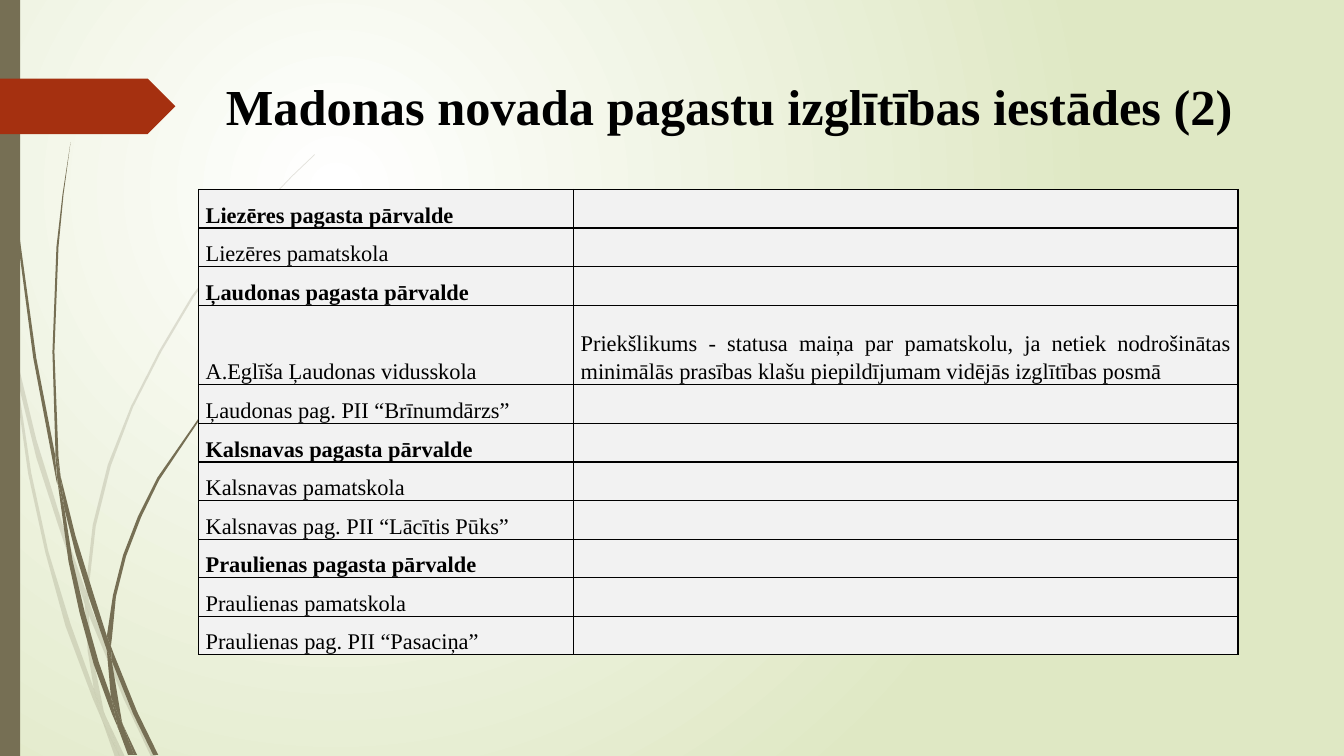
from lxml import etree
from pptx import Presentation
from pptx.dml.color import RGBColor
from pptx.enum.shapes import MSO_SHAPE
from pptx.enum.text import MSO_ANCHOR, PP_ALIGN
from pptx.oxml import parse_xml
from pptx.oxml.ns import nsdecls, qn
from pptx.util import Inches, Pt

RECTANGLE, PENTAGON = MSO_SHAPE.RECTANGLE, MSO_SHAPE.PENTAGON
TOP, BOTTOM = MSO_ANCHOR.TOP, MSO_ANCHOR.BOTTOM
LEFT, JUSTIFY = PP_ALIGN.LEFT, PP_ALIGN.JUSTIFY
FONT = "Times New Roman"
OLIVE, RUST, BLACK, PALE = "766F54", "A53010", "000000", "F2F2F2"

# Outlines of the grass pieces, in inches
LIGHT_GRASS = [
    [(0.11, 3.5), (0.09, 3.22), (0, 2.82), (0, 2.99), (0.1, 3.44)],
    [(0.58, 5.22), (0.84, 5.99), (0.85, 5.86), (0.62, 5.2), (0.36, 4.36),
     (0.14, 3.45), (0.17, 3.76), (0.36, 4.54)],
    [(0.92, 6.07), (0.88, 5.96), (0.88, 6.1), (1.23, 6.94), (1.5, 7.51),
     (1.55, 7.51), (1.27, 6.92)],
    [(1.19, 7.51), (1.24, 7.51), (1.05, 7.11)],
    [(0.93, 6.83), (0.7, 6.19), (0.48, 5.47), (0.31, 4.69), (0.17, 3.76),
     (0.11, 3.5), (0.28, 4.7), (0.45, 5.48), (0.65, 6.21), (0.92, 6.93),
     (1.01, 7.14), (0.99, 7.07)],
    [(0.84, 5.99), (0.87, 6.46), (0.93, 6.83), (0.96, 6.92), (1.05, 7.11),
     (1.03, 7.06), (0.91, 6.46), (0.88, 6.1), (0.88, 6.08)],
    [(0.88, 5.84), (0.95, 5.22), (1.1, 4.62), (1.32, 4.04), (1.6, 3.49),
     (1.92, 2.95), (2.29, 2.45), (2.68, 1.98), (2.9, 1.75), (3.12, 1.54),
     (3.12, 1.53), (2.89, 1.75), (2.68, 1.97), (2.28, 2.44), (1.9, 2.94),
     (1.58, 3.48), (1.3, 4.03), (1.07, 4.61), (0.92, 5.21), (0.85, 5.84),
     (0.85, 5.86), (0.88, 5.96)],
    [(1.01, 7.14), (1.14, 7.51), (1.19, 7.51)],
    [(0.88, 6.08), (0.88, 6.1), (0.88, 5.96), (0.85, 5.86), (0.84, 5.99)],
    [(0.96, 6.92), (0.93, 6.83), (0.99, 7.07), (1.01, 7.14), (1.19, 7.51),
     (1.05, 7.11)],
]
DARK_GRASS = [
    [(0.07, 1.1), (0.17, 2.33), (0.33, 3.55), (0.56, 4.77), (0.57, 4.81),
     (0.55, 4.57), (0.55, 4.53), (0.36, 3.55), (0.19, 2.32), (0.08, 1.09),
     (0.05, 0.48), (0.04, 0), (0.03, 0), (0.04, 0.48)],
    [(0.88, 5.92), (1.06, 6.45), (1.06, 6.31), (0.93, 5.9), (0.75, 5.32),
     (0.6, 4.72), (0.64, 5.05), (0.75, 5.49)],
    [(1.13, 6.49), (1.1, 6.41), (1.11, 6.56), (1.32, 7.08), (1.52, 7.49),
     (1.57, 7.49), (1.36, 7.06)],
    [(1.1, 6.91), (0.98, 6.57), (0.84, 6.07), (0.72, 5.56), (0.64, 5.05),
     (0.57, 4.77), (0.68, 5.57), (0.79, 6.08), (0.93, 6.59), (1.11, 7.08),
     (1.17, 7.22), (1.16, 7.17)],
    [(0.6, 4.72), (0.58, 4.53), (0.54, 3.49), (0.58, 2.45), (0.63, 1.93),
     (0.7, 1.41), (0.62, 1.93), (0.56, 2.45), (0.52, 3.49), (0.55, 4.49)],
    [(1.33, 7.49), (1.36, 7.49), (1.22, 7.19)],
    [(0.57, 4.77), (0.64, 5.05), (0.6, 4.72), (0.55, 4.49), (0.55, 4.53)],
    [(1.11, 6.33), (1.15, 5.92), (1.25, 5.52), (1.4, 5.13), (1.58, 4.76),
     (2.05, 4.06), (2.31, 3.74), (2.45, 3.59), (2.61, 3.44), (2.6, 3.44),
     (2.45, 3.58), (2.31, 3.73), (2.04, 4.05), (1.56, 4.74), (1.37, 5.12),
     (1.22, 5.51), (1.12, 5.91), (1.06, 6.31), (1.1, 6.41)],
    [(1.17, 7.22), (1.27, 7.49), (1.31, 7.49)],
    [(1.06, 6.45), (1.1, 6.91), (1.16, 7.06), (1.22, 7.19), (1.21, 7.16),
     (1.11, 6.56), (1.09, 6.51)],
    [(1.06, 6.45), (1.09, 6.51), (1.11, 6.56), (1.1, 6.41), (1.06, 6.31)],
    [(1.16, 7.06), (1.1, 6.91), (1.16, 7.17), (1.17, 7.22), (1.3, 7.49),
     (1.33, 7.49), (1.22, 7.19)],
]

# First column, second column, bold
ROWS = [
    ("Liezēres pagasta pārvalde", "", True),
    ("Liezēres pamatskola", "", False),
    ("Ļaudonas pagasta pārvalde", "", True),
    ("A.Eglīša Ļaudonas vidusskola",
     "Priekšlikums - statusa maiņa par pamatskolu, ja netiek nodrošinātas "
     "minimālās prasības klašu piepildījumam vidējās izglītības posmā", False),
    ("Ļaudonas pag. PII “Brīnumdārzs”", "", False),
    ("Kalsnavas pagasta pārvalde", "", True),
    ("Kalsnavas pamatskola", "", False),
    ("Kalsnavas pag. PII “Lācītis Pūks”", "", False),
    ("Praulienas pagasta pārvalde", "", True),
    ("Praulienas pamatskola", "", False),
    ("Praulienas pag. PII “Pasaciņa”", "", False),
]


def color(value):
    return RGBColor.from_string(value)


def paint(shape, value):
    shape.shadow.inherit = False
    shape.fill.solid()
    shape.fill.fore_color.rgb = color(value)
    shape.line.fill.background()


def set_font(para, size, bold):
    font = para.font
    font.name, font.size, font.bold = FONT, Pt(size), bold
    font.color.rgb = color(BLACK)


def add_background(page):
    fill = page.background.fill
    fill.gradient()
    for stop, value in zip(fill.gradient_stops, ("FFFFFF", "DFE8C4")):
        stop.color.rgb = color(value)
    gradient = page.element.xpath(".//a:gradFill")[0]
    gradient.remove(gradient.find(qn("a:lin")))
    gradient.append(parse_xml(
        f'<a:path {nsdecls("a")} path="circle">'
        '<a:fillToRect l="50000" t="50000" r="100000" b="100000"/></a:path>'))


def add_grass(page, left, top, pieces, opacity):
    group = page.shapes.add_group_shape()
    for piece in pieces:
        outline = [(Inches(left + x), Inches(top + y)) for x, y in piece]
        builder = group.shapes.build_freeform(*outline[0])
        builder.add_line_segments(outline[1:], close=True)
        blade = builder.convert_to_shape()
        paint(blade, OLIVE)
        if opacity < 100:
            tint = blade.element.spPr.find(qn("a:solidFill"))[0]
            etree.SubElement(tint, qn("a:alpha"), val=str(opacity * 1000))


def add_decoration(page, left, top, height):
    add_grass(page, left, top, LIGHT_GRASS, 20)
    add_grass(page, left, top, DARK_GRASS, 100)
    side_bar = page.shapes.add_shape(
        RECTANGLE, Inches(left), Inches(top), Inches(0.2), Inches(height))
    paint(side_bar, OLIVE)
    arrow = page.shapes.add_shape(
        PENTAGON, Inches(left), Inches(top + 0.78), Inches(1.74), Inches(0.55))
    paint(arrow, RUST)


def add_title(page, left, top, width, height):
    title = page.shapes.title
    title.left, title.top = Inches(left), Inches(top)
    title.width, title.height = Inches(width), Inches(height)
    frame = title.text_frame
    frame.text = "Madonas novada pagastu izglītības iestādes (2)"
    frame.vertical_anchor = TOP
    frame.word_wrap = True
    para = frame.paragraphs[0]
    para.alignment = LEFT
    set_font(para, 36, True)


def format_cell(cell, text, bold):
    cell.text = text
    cell.vertical_anchor = BOTTOM
    cell.margin_left = cell.margin_right = Inches(0.07)
    cell.margin_top = cell.margin_bottom = 0
    para = cell.text_frame.paragraphs[0]
    para.alignment = JUSTIFY
    para.line_spacing = 1.15
    para.space_before = Pt(5)
    set_font(para, 16, bold)
    properties = cell._tc.get_or_add_tcPr()
    for side in ("lnL", "lnR", "lnT", "lnB"):
        properties.append(parse_xml(
            f'<a:{side} {nsdecls("a")} w="{Pt(1)}"><a:solidFill>'
            f'<a:srgbClr val="{BLACK}"/></a:solidFill></a:{side}>'))
    cell.fill.solid()
    cell.fill.fore_color.rgb = color(PALE)


def add_school_table(page, left, top, width, height):
    table = page.shapes.add_table(
        len(ROWS), 2, Inches(left), Inches(top), Inches(width), Inches(height)).table
    table.first_row = table.horz_banding = False
    name_width, tall_row = 3.72, 0.79
    table.columns[0].width = Inches(name_width)
    table.columns[1].width = Inches(width - name_width)
    plain_row = (height - tall_row) / (len(ROWS) - 1)
    for index, (school, note, bold) in enumerate(ROWS):
        table.rows[index].height = Inches(tall_row if note else plain_row)
        format_cell(table.cell(index, 0), school, bold)
        format_cell(table.cell(index, 1), note, False)


def main():
    deck = Presentation()
    deck.slide_width, deck.slide_height = Inches(13.33), Inches(7.5)
    page = deck.slides.add_slide(deck.slide_layouts[5])
    add_background(page)
    add_decoration(page, 0, 0, 7.5)
    add_title(page, 2.14, 0.69, 10.44, 1.4)
    add_school_table(page, 1.97, 1.88, 10.31, 4.62)
    deck.save("out.pptx")


if __name__ == "__main__":
    main()
